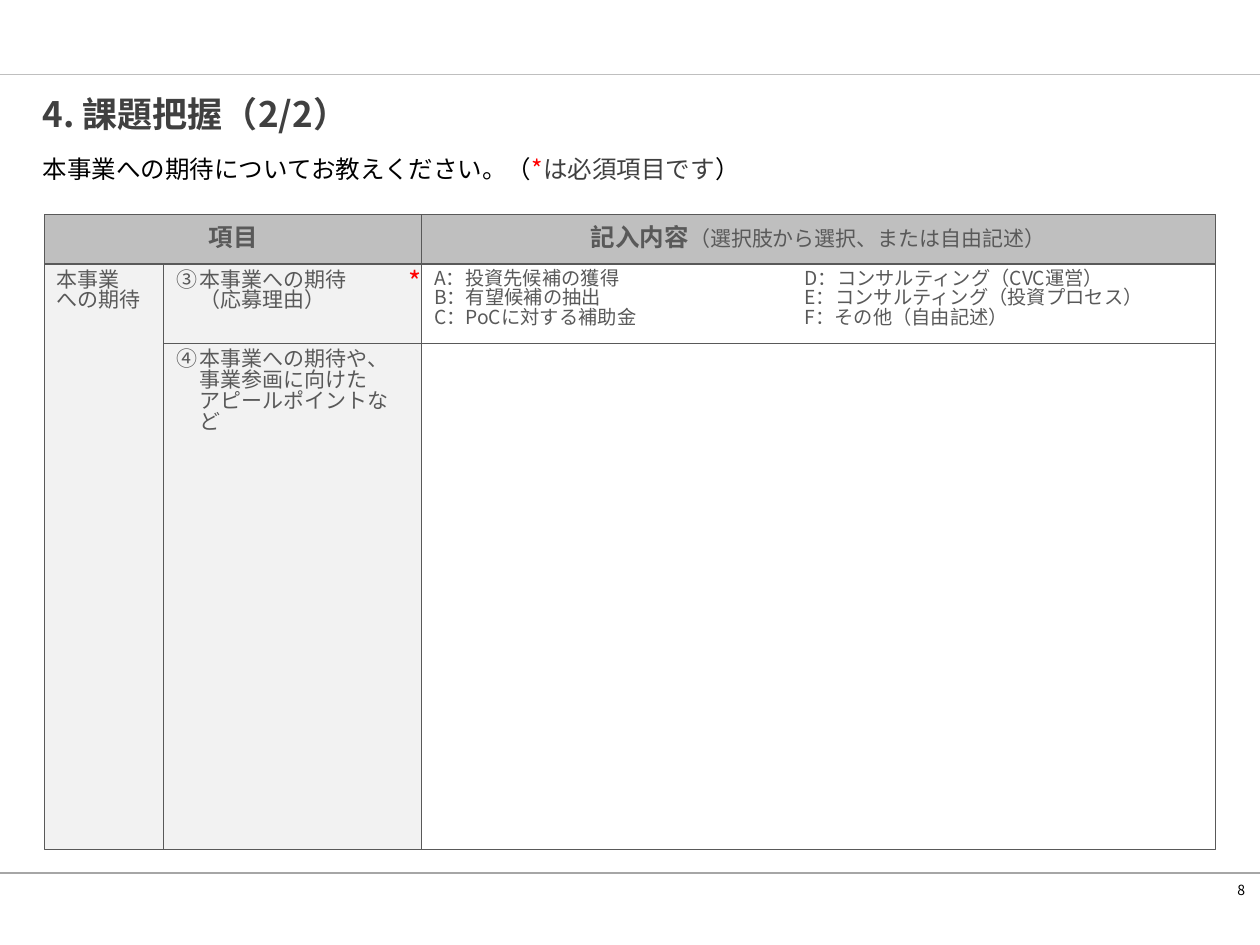
import pptx
import pptx.dml.color
import pptx.enum.shapes
import pptx.enum.text
import pptx.oxml.ns
import pptx.util
from lxml import etree

Cm = pptx.util.Cm
Pt = pptx.util.Pt
RGBColor = pptx.dml.color.RGBColor
Align = pptx.enum.text.PP_ALIGN
Anchor = pptx.enum.text.MSO_ANCHOR
qn = pptx.oxml.ns.qn

BLACK = RGBColor(0x00, 0x00, 0x00)
WHITE = RGBColor(0xFF, 0xFF, 0xFF)
RED = RGBColor(0xFF, 0x00, 0x00)
INK = RGBColor(0x40, 0x40, 0x40)
GREY = RGBColor(0x59, 0x59, 0x59)
HEADER = RGBColor(0xBF, 0xBF, 0xBF)
LABEL = RGBColor(0xF2, 0xF2, 0xF2)
FOOT_RULE = RGBColor(0xA6, 0xA6, 0xA6)

PAGE_WIDTH, PAGE_HEIGHT = 25.4, 19.05
COLUMNS = (0.9, 3.3, 8.5, 24.5)
ROWS = (4.32, 5.32, 6.93, 17.12)
NO_INSETS = (0, 0)
CELL_INSETS = (0.25, 0.13)
HANGING = 0.48


class FormPage:
    font = "Noto Sans CJK JP"
    line_spacing = 0.83
    line_width = Pt(0.75)

    def __init__(self, deck):
        self.page = deck.slides.add_slide(deck.slide_layouts[5])

    def rule(self, y, color):
        line = self.page.shapes.add_connector(
            pptx.enum.shapes.MSO_CONNECTOR.STRAIGHT, 0, Cm(y), Cm(PAGE_WIDTH), Cm(y))
        line.line.color.rgb = color
        line.line.width = self.line_width
        etree.SubElement(line._element.spPr, qn("a:effectLst"))

    def set_text(self, shape, lines, size, color, bold=False, align=Align.LEFT,
                 anchor=Anchor.TOP, insets=NO_INSETS, indents=()):
        """Fill a shape; a line is a text or a list of (text, run font settings),
        and indents gives (left margin, first line) in cm for each line."""
        frame = shape.text_frame
        frame.word_wrap = True
        frame.auto_size = pptx.enum.text.MSO_AUTO_SIZE.NONE
        frame.vertical_anchor = anchor
        frame.margin_left = frame.margin_right = Cm(insets[0])
        frame.margin_top = frame.margin_bottom = Cm(insets[1])
        for index, line in enumerate(lines):
            para = frame.add_paragraph() if index else frame.paragraphs[0]
            para.alignment = align
            para.line_spacing = self.line_spacing
            if indents:
                margin, first = indents[index]
                properties = para._p.get_or_add_pPr()
                properties.set("marL", str(Cm(margin)))
                properties.set("indent", str(Cm(first)))
            font = para.font
            font.size, font.bold, font.name = Pt(size), bold, self.font
            font.color.rgb = color
            etree.SubElement(font._element, qn("a:ea"), typeface=self.font)
            for text, changes in [(line, {})] if isinstance(line, str) else line:
                span = para.add_run()
                span.text = text
                if "color" in changes:
                    span.font.color.rgb = changes["color"]
                if "size" in changes:
                    span.font.size = Pt(changes["size"])
                if "bold" in changes:
                    span.font.bold = changes["bold"]

    def title(self, text, left, top, width, height):
        box = self.page.shapes.title
        box.left, box.top, box.width, box.height = map(Cm, (left, top, width, height))
        self.set_text(box, [text], 20, INK, bold=True, anchor=Anchor.MIDDLE)

    def text(self, lines, left, top, width, height, size, color, **style):
        box = self.page.shapes.add_textbox(*map(Cm, (left, top, width, height)))
        self.set_text(box, lines, size, color, **style)

    def cell(self, columns, rows, fill, lines=(), size=12, **style):
        """Draw a form field between two column edges and two row edges."""
        left, right = (COLUMNS[edge] for edge in columns)
        top, bottom = (ROWS[edge] for edge in rows)
        box = self.page.shapes.add_shape(
            pptx.enum.shapes.MSO_SHAPE.RECTANGLE,
            *map(Cm, (left, top, right - left, bottom - top)))
        box.shadow.inherit = False
        box.fill.solid()
        box.fill.fore_color.rgb = fill
        box.line.color.rgb = GREY
        box.line.width = self.line_width
        self.set_text(box, lines, size, GREY, insets=CELL_INSETS, **style)


def main():
    deck = pptx.Presentation()
    deck.slide_width, deck.slide_height = Cm(PAGE_WIDTH), Cm(PAGE_HEIGHT)
    form = FormPage(deck)

    form.rule(1.5, HEADER)
    form.rule(17.6, FOOT_RULE)
    form.text(["8"], 24.46, 17.83, 0.64, 0.3, 8, BLACK, align=Align.RIGHT)
    form.title("4. 課題把握（2/2）", 0.86, 1.57, 23.85, 1.6)
    form.text([[("本事業への期待についてお教えください。（", {}),
                ("*", {"color": RED}),
                ("は必須項目です", {"color": INK}),
                ("）", {})]],
              0.86, 3.2, 23.85, 0.99, 14, BLACK)

    header = dict(size=14, bold=True, align=Align.CENTER, anchor=Anchor.MIDDLE)
    form.cell((0, 2), (0, 1), HEADER, ["項目"], **header)
    form.cell((2, 3), (0, 1), HEADER,
              [[("記入内容", {}),
                ("（選択肢から選択、または自由記述）", {"size": 12, "bold": False})]],
              **header)

    numbered, continued = (HANGING, -HANGING), (HANGING, 0)
    form.cell((0, 1), (1, 3), LABEL, ["本事業", "への期待"])
    form.cell((1, 2), (1, 2), LABEL, ["③\t本事業への期待", "（応募理由）"],
              indents=(numbered, continued))
    form.cell((1, 2), (2, 3), LABEL,
              ["④\t本事業への期待や、", "事業参画に向けた", "アピールポイントなど"],
              indents=(numbered, continued, continued))
    form.cell((2, 3), (1, 2), WHITE)
    form.cell((2, 3), (2, 3), WHITE)

    top, height = ROWS[1], ROWS[2] - ROWS[1]
    form.text(["*"], COLUMNS[2] - 0.4, top, 0.4, height, 16, RED,
              align=Align.RIGHT, insets=(0, CELL_INSETS[1]))
    choices = (
        (COLUMNS[2], 7,
         ["A：投資先候補の獲得", "B：有望候補の抽出", "C：PoCに対する補助金"]),
        (15.97, 8.5,
         ["D：コンサルティング（CVC運営）", "E：コンサルティング（投資プロセス）",
          "F：その他（自由記述）"]),
    )
    for left, width, lines in choices:
        form.text(lines, left, top, width, height, 11, GREY, insets=CELL_INSETS)

    deck.save("out.pptx")


if __name__ == "__main__":
    main()
